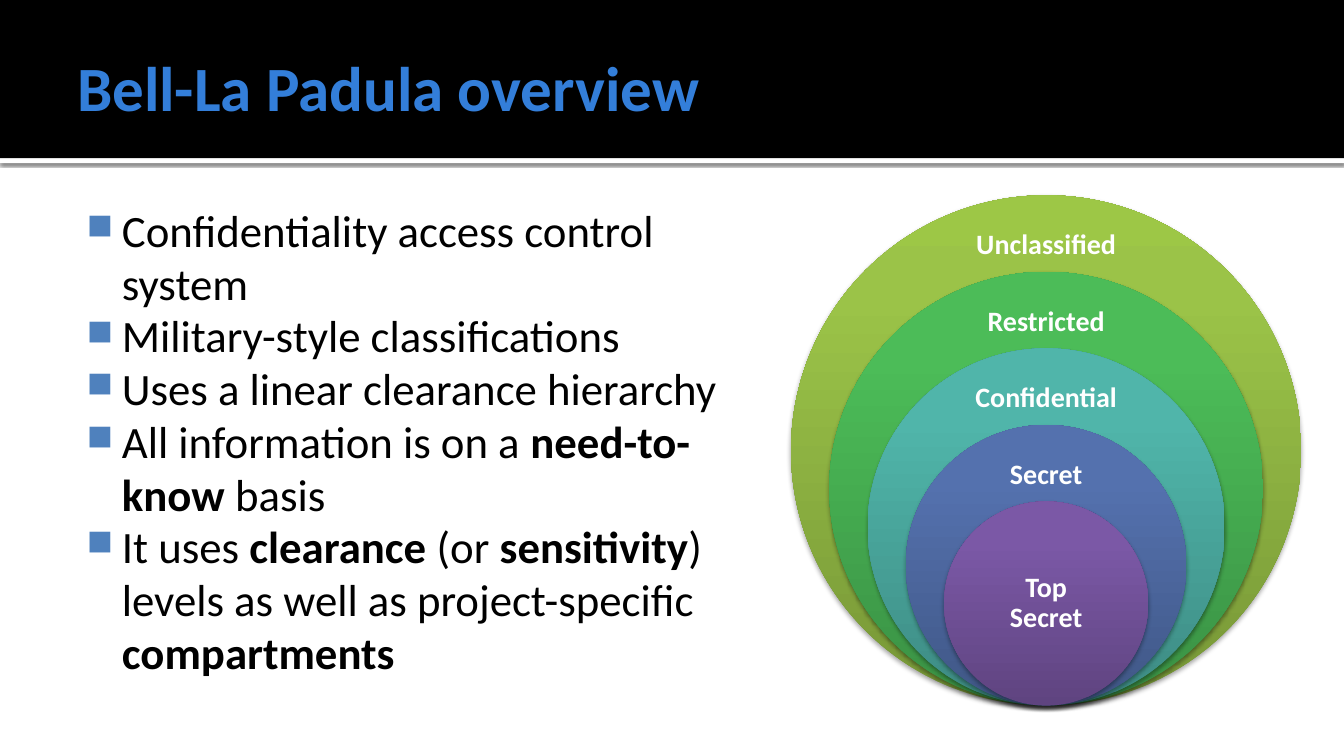
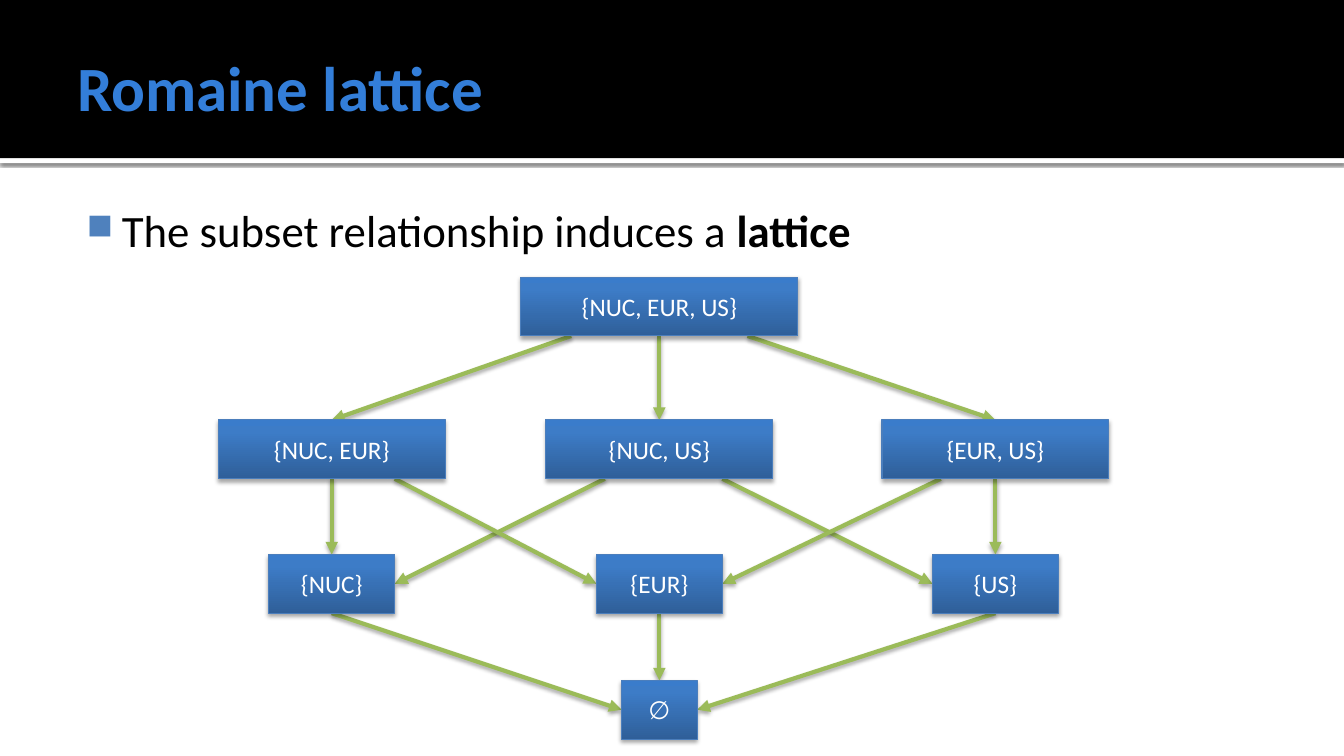
"""Builds two slides on clearance levels and the lattice of compartments."""
from copy import deepcopy
from dataclasses import dataclass

from lxml import etree
from pptx import Presentation
from pptx.dml.color import RGBColor
from pptx.enum.shapes import MSO_CONNECTOR, MSO_SHAPE
from pptx.enum.text import MSO_ANCHOR, PP_ALIGN
from pptx.oxml.ns import qn
from pptx.util import Pt

RECT, OVAL = MSO_SHAPE.RECTANGLE, MSO_SHAPE.OVAL
STRAIGHT = MSO_CONNECTOR.STRAIGHT
TOP, MIDDLE = MSO_ANCHOR.TOP, MSO_ANCHOR.MIDDLE
LEFT, CENTER = PP_ALIGN.LEFT, PP_ALIGN.CENTER
SITE_TOP, SITE_LEFT, SITE_RIGHT = 0, 1, 3


@dataclass(frozen=True)
class Theme:
    """Colours, type sizes and shadows shared by the slides."""
    font: str = "Calibri"
    title_size: float = 45
    body_size: float = 32
    ring_size: float = 20
    node_size: float = 18
    title: str = "337ED9"
    text: str = "000000"
    band: str = "000000"
    white: str = "FFFFFF"
    bullet: str = "4F81BD"
    arrow: str = "9BBB59"
    node_line: str = "4B7EBC"
    node_fill: tuple = ("2F5F99", "3D7CC7", "3A7CCB")
    soft_shadow: tuple = (35, 3.1, 1.8)
    band_shadow: tuple = (60, 2.5, 0.8)


THEME = Theme()
SLIDE_W, SLIDE_H = 960, 540
BODY_TOP, BODY_H = 139.5, 364.5

RINGS = [
    ("Unclassified", ("779737", "9BC348", "9DC746")),
    ("Restricted", ("3A9144", "4CBC58", "4ABF57")),
    ("Confidential", ("3D8B83", "50B5AA", "4EB8AC")),
    ("Secret", ("405786", "5471AE", "5271B0")),
    ("Top Secret", ("5F4480", "7B58A6", "7C57A8")),
]

COLUMNS = (237, 471, 711)
NODE_H = 42
LEVELS = [
    (198, 198, {1: "{NUC, EUR, US}"}),
    (300, 162, {0: "{NUC, EUR}", 1: "{NUC, US}", 2: "{EUR, US}"}),
    (396, 90, {0: "{NUC}", 1: "{EUR}", 2: "{US}"}),
    (486, 54, {1: "∅"}),
]
EDGES = [
    ("{NUC, EUR, US}", "{NUC, EUR}", -63, SITE_TOP),
    ("{NUC, EUR, US}", "{EUR, US}", 63, SITE_TOP),
    ("{NUC, EUR, US}", "{NUC, US}", 0, SITE_TOP),
    ("{NUC, EUR}", "{NUC}", 0, SITE_TOP),
    ("{EUR, US}", "{US}", 0, SITE_TOP),
    ("{NUC}", "∅", 0, SITE_LEFT),
    ("{EUR}", "∅", 0, SITE_TOP),
    ("{US}", "∅", 0, SITE_RIGHT),
    ("{NUC, US}", "{NUC}", -39, SITE_RIGHT),
    ("{NUC, US}", "{US}", 45, SITE_LEFT),
    ("{EUR, US}", "{EUR}", -39, SITE_RIGHT),
    ("{NUC, EUR}", "{EUR}", 45, SITE_LEFT),
]


def rgb(color):
    """Return a colour object for a hex string."""
    return RGBColor.from_string(color)


def child(parent, tag, **attrs):
    """Append an XML element with the given attributes."""
    el = etree.SubElement(parent, qn(tag))
    for name, value in attrs.items():
        el.set(name, str(value))
    return el


def add_shadow(effects, shadow):
    """Add a downward black shadow to an effect list."""
    alpha, blur, dist = shadow
    outer = child(effects, "a:outerShdw", blurRad=Pt(blur), dist=Pt(dist),
                  dir=5400000, rotWithShape=0)
    color = child(outer, "a:srgbClr", val="000000")
    child(color, "a:alpha", val=alpha * 1000)


def fill_gradient(sp, colors):
    """Fill a shape from bottom to top with three colours."""
    sp.fill.gradient()
    sp.fill.gradient_angle = 90
    stops = sp._element.spPr.find(".//" + qn("a:gsLst"))
    stops.append(deepcopy(stops[-1]))
    for stop, color, position in zip(sp.fill.gradient_stops, colors, (0, 0.8, 1)):
        stop.color.rgb = rgb(color)
        stop.position = position


def add_shape(s, kind, box, fill, line=None, shadow=None):
    """Add a preset shape with a plain or gradient fill."""
    sp = s.shapes.add_shape(kind, *map(Pt, box))
    sp.shadow.inherit = False
    if shadow:
        add_shadow(sp._element.spPr.find(qn("a:effectLst")), shadow)
    if isinstance(fill, tuple):
        fill_gradient(sp, fill)
    else:
        sp.fill.solid()
        sp.fill.fore_color.rgb = rgb(fill)
    if line:
        sp.line.color.rgb = rgb(line)
        sp.line.width = Pt(0.75)
    else:
        sp.line.fill.background()
    return sp


def style(p, size, color, align=LEFT, bold=None):
    """Set the font and alignment of a paragraph."""
    p.alignment = align
    p.font.name = THEME.font
    p.font.size = Pt(size)
    p.font.color.rgb = rgb(color)
    p.font.bold = bold


def add_text_box(s, box, margins, anchor):
    """Add a wrapping text box and return its text frame."""
    tf = s.shapes.add_textbox(*map(Pt, box)).text_frame
    tf.word_wrap = True
    tf.vertical_anchor = anchor
    (tf.margin_left, tf.margin_top,
     tf.margin_right, tf.margin_bottom) = map(Pt, margins)
    return tf


def add_bullet(p):
    """Give a paragraph a hanging square bullet."""
    pPr = p._p.get_or_add_pPr()
    pPr.set("marL", str(Pt(34.56)))
    pPr.set("indent", str(Pt(-25.2)))
    child(child(pPr, "a:buClr"), "a:srgbClr", val=THEME.bullet)
    child(pPr, "a:buSzPct", val=80000)
    child(pPr, "a:buChar", char="■")


def add_body(s, width, items):
    """Add a bullet list in which double asterisks mark bold words."""
    tf = add_text_box(s, (48, BODY_TOP, width, BODY_H), (4.5, 7.2, 7.2, 3.6), TOP)
    for i, item in enumerate(items):
        p = tf.add_paragraph() if i else tf.paragraphs[0]
        p.line_spacing = 0.98
        add_bullet(p)
        style(p, THEME.body_size, THEME.text)
        for j, part in enumerate(item.split("**")):
            if part:
                r = p.add_run()
                r.text = part
                r.font.bold = j % 2 == 1


def add_slide(prs, title):
    """Add a blank slide with the header bands and a title."""
    s = prs.slides.add_slide(prs.slide_layouts[6])
    add_shape(s, RECT, (0, 113, SLIDE_W, 3.6), THEME.white, shadow=THEME.band_shadow)
    add_shape(s, RECT, (0, 0, SLIDE_W, 113), THEME.band)
    tf = add_text_box(s, (48, 12, 864, 99), (7.2, 3.6, 3.6, 3.6), MIDDLE)
    p = tf.paragraphs[0]
    p.text = title
    style(p, THEME.title_size, THEME.title, bold=True)
    return s


def add_rings(s, center_x, bottom, diameter):
    """Stack shrinking circles on one bottom point and label each."""
    for i, (label, colors) in enumerate(RINGS):
        d = diameter * (1 - 0.15 * i)
        top = bottom - d
        add_shape(s, OVAL, (center_x - d / 2, top, d, d), colors,
                  shadow=THEME.soft_shadow)
        innermost = i == len(RINGS) - 1
        w, h = (103, 73) if innermost else (137, 36)
        center_y = top + (d / 2 if innermost else 36)
        tf = add_text_box(s, (center_x - w / 2, center_y - h / 2, w, h),
                          (11.5,) * 4, MIDDLE)
        p = tf.paragraphs[0]
        p.text = label
        p.line_spacing = 0.9
        style(p, THEME.ring_size, THEME.white, CENTER, True)


def add_node(s, center_x, top, width, label):
    """Add one labelled box of the lattice."""
    sp = add_shape(s, RECT, (center_x - width / 2, top, width, NODE_H),
                   THEME.node_fill, THEME.node_line, THEME.soft_shadow)
    tf = sp.text_frame
    tf.vertical_anchor = MIDDLE
    p = tf.paragraphs[0]
    p.text = label
    style(p, THEME.node_size, THEME.white, CENTER)
    return sp


def add_arrow(s, source, target, dx, site):
    """Add an arrow from the bottom of one box to a side of another."""
    x = source.left + source.width // 2 + Pt(dx)
    y = source.top + source.height
    cn = s.shapes.add_connector(STRAIGHT, x, y, x, y)
    cn.end_connect(target, site)
    cn.line.color.rgb = rgb(THEME.arrow)
    cn.line.width = Pt(3)
    spPr = cn._element.spPr
    child(spPr.find(qn("a:ln")), "a:tailEnd", type="triangle")
    add_shadow(child(spPr, "a:effectLst"), THEME.soft_shadow)
    return cn


def add_lattice(s):
    """Add the boxes level by level, with the arrows behind them."""
    nodes = {}
    for top, width, labels in LEVELS:
        for column, label in labels.items():
            nodes[label] = add_node(s, COLUMNS[column], top, width, label)
    first = next(iter(nodes.values()))
    for source, target, dx, site in EDGES:
        cn = add_arrow(s, nodes[source], nodes[target], dx, site)
        first._element.addprevious(cn._element)


def main():
    """Build and save the presentation."""
    prs = Presentation()
    prs.slide_width, prs.slide_height = Pt(SLIDE_W), Pt(SLIDE_H)

    s = add_slide(prs, "Bell-La Padula overview")
    add_body(s, 516, [
        "Confidentiality access control system",
        "Military-style classifications",
        "Uses a linear clearance hierarchy",
        "All information is on a **need-to-know** basis",
        "It uses **clearance** (or **sensitivity**) levels as well as "
        "project-specific **compartments**",
    ])
    add_rings(s, 747.25, BODY_TOP + BODY_H, BODY_H)

    s = add_slide(prs, "Romaine lattice")
    add_body(s, 864, ["The subset relationship induces a **lattice**"])
    add_lattice(s)

    prs.save("out.pptx")


if __name__ == "__main__":
    main()
